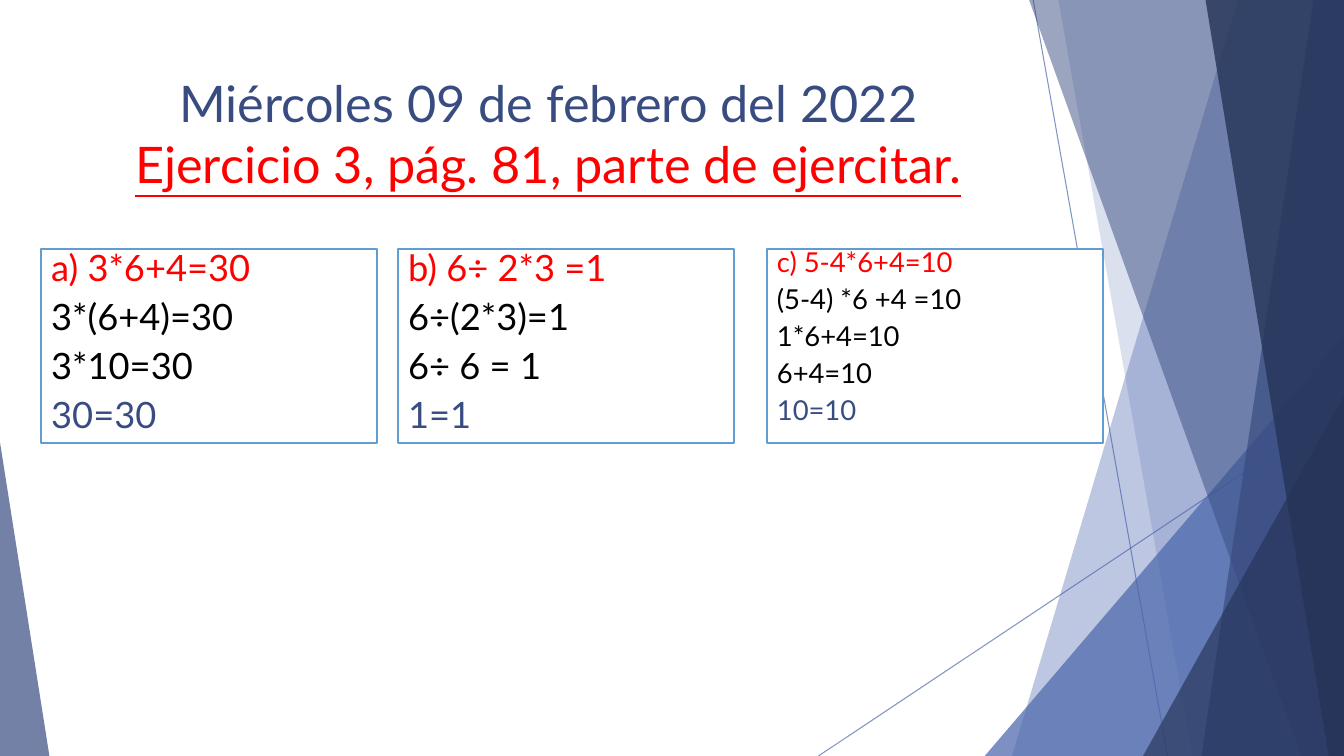
from dataclasses import dataclass
from typing import Any

from pptx import Presentation
from pptx.dml.color import RGBColor
from pptx.enum.shapes import MSO_CONNECTOR as CONN, MSO_SHAPE as SHAPE
from pptx.enum.text import MSO_ANCHOR as ANCHOR, PP_ALIGN as ALIGN
from pptx.oxml.ns import qn
from pptx.util import Pt
from lxml.etree import SubElement


@dataclass(frozen=True)
class Theme:
    font: str = "Lato"
    accent: str = "4A66AC"
    dark: str = "384C81"
    darkest: str = "253356"
    border: str = "629DD1"
    red: str = "FF0000"
    black: str = "000000"
    white: str = "FFFFFF"
    title_size: float = 36
    large: float = 25.9
    small: float = 19.6


@dataclass(frozen=True)
class Ray:
    start: tuple[float, float]
    end: tuple[float, float]


@dataclass(frozen=True)
class Band:
    """Panel from a slanted left edge to the right side of the slide."""
    top_x: float
    bottom_x: float
    color: str
    opacity: int


@dataclass(frozen=True)
class Wedge:
    """Right triangle standing on the bottom of the slide."""
    left: float
    top: float
    width: float
    apex: float
    color: str
    opacity: int


@dataclass(frozen=True)
class Exercise:
    left: float
    size: float
    spacing: float
    lines: tuple[str, ...]


T = Theme()
WIDTH, HEIGHT = 960, 540
BOX_TOP, BOX_WIDTH, BOX_HEIGHT = 177.8, 239.8, 139

RAYS = [Ray((738, 0), (834, HEIGHT)), Ray((WIDTH, 290), (584.6, HEIGHT))]
DECOR: list[Band | Wedge] = [
    Band(884.2, 722.9, T.accent, 36),
    Band(756, 851.8, T.accent, 20),
    Wedge(703.4, 240, 256.6, 1, T.accent, 72),
    Band(735.1, 929.5, T.dark, 50),
    Band(938.2, 858.2, T.dark, 70),
    Band(861.1, 949, T.darkest, 80),
    Wedge(816.5, 283, 143.5, 1, T.darkest, 66),
    Wedge(0, 316, 35.3, 0, T.dark, 70),
]
EXERCISES = [
    Exercise(29.5, T.large, 0.8,
             ("a) 3*6+4=30", "3*(6+4)=30", "3*10=30", "30=30")),
    Exercise(284.4, T.large, 0.8,
             ("b) 6÷ 2*3 =1", "6÷(2*3)=1", "6÷ 6 = 1", "1=1")),
    Exercise(547.9, T.small, 0.7,
             ("c) 5-4*6+4=10", "(5-4) *6 +4 =10", "1*6+4=10", "6+4=10", "10=10")),
]


def rgb(color: str) -> RGBColor:
    return RGBColor.from_string(color)


def apply(target: Any, formats: dict[str, Any]) -> None:
    for name, value in formats.items():
        setattr(target, name, value)


def set_opacity(element: Any, percent: int) -> None:
    for clr in element.spPr.iter(qn("a:srgbClr")):
        SubElement(clr, qn("a:alpha"), val=str(percent * 1000))


def add_run(p: Any, text: str, size: float, color: str, **extra: Any) -> None:
    r = p.add_run()
    r.text = text
    apply(r.font, {"name": T.font, "size": Pt(size), **extra})
    r.font.color.rgb = rgb(color)


def add_ray(s: Any, ray: Ray) -> None:
    line = s.shapes.add_connector(CONN.STRAIGHT, *map(Pt, ray.start + ray.end))
    line.line.width = Pt(0.75)
    line.line.color.rgb = rgb(T.accent)
    set_opacity(line._element, 70)
    SubElement(line._element.spPr, qn("a:effectLst"))


def add_decor(s: Any, item: Band | Wedge) -> None:
    if isinstance(item, Band):
        builder = s.shapes.build_freeform(Pt(item.top_x), Pt(0))
        corners = [(WIDTH, 0), (WIDTH, HEIGHT), (item.bottom_x, HEIGHT)]
        builder.add_line_segments([(Pt(x), Pt(y)) for x, y in corners], close=True)
        sp = builder.convert_to_shape()
    else:
        box = (item.left, item.top, item.width, HEIGHT - item.top)
        sp = s.shapes.add_shape(SHAPE.ISOSCELES_TRIANGLE, *map(Pt, box))
        sp.adjustments[0] = item.apex
    sp.shadow.inherit = False
    sp.line.fill.background()
    sp.fill.solid()
    sp.fill.fore_color.rgb = rgb(item.color)
    set_opacity(sp._element, item.opacity)


def add_title(s: Any) -> None:
    tf = s.shapes.add_textbox(Pt(53.3), Pt(48.2), Pt(676.8), Pt(103.7)).text_frame
    apply(tf, {"word_wrap": True, "vertical_anchor": ANCHOR.TOP})
    p = tf.paragraphs[0]
    p.alignment = ALIGN.CENTER
    add_run(p, "Miércoles 09 de febrero del 2022", T.title_size, T.dark)
    p.add_line_break()
    add_run(p, "Ejercicio 3, pág. 81, parte de ejercitar.", T.title_size, T.red,
            underline=True)


def add_exercise(s: Any, ex: Exercise) -> None:
    box = (ex.left, BOX_TOP, BOX_WIDTH, BOX_HEIGHT)
    sp = s.shapes.add_shape(SHAPE.RECTANGLE, *map(Pt, box))
    sp.shadow.inherit = False
    sp.fill.solid()
    sp.fill.fore_color.rgb = rgb(T.white)
    sp.line.width = Pt(1.5)
    sp.line.color.rgb = rgb(T.border)
    tf = sp.text_frame
    apply(tf, {"word_wrap": True, "vertical_anchor": ANCHOR.TOP})
    # Statement in red, steps in black, result in blue
    colors = [T.red, *[T.black] * (len(ex.lines) - 2), T.dark]
    for i, (text, color) in enumerate(zip(ex.lines, colors)):
        p = tf.add_paragraph() if i else tf.paragraphs[0]
        apply(p, {"alignment": ALIGN.LEFT, "line_spacing": ex.spacing,
                  "space_before": Pt(10)})
        add_run(p, text, ex.size, color)


def main() -> None:
    prs = Presentation()
    apply(prs, {"slide_width": Pt(WIDTH), "slide_height": Pt(HEIGHT)})
    s = prs.slides.add_slide(prs.slide_layouts[6])

    # Background facets
    for ray in RAYS:
        add_ray(s, ray)
    for item in DECOR:
        add_decor(s, item)

    # Title and worked exercises
    add_title(s)
    for ex in EXERCISES:
        add_exercise(s, ex)

    prs.save("out.pptx")


if __name__ == "__main__":
    main()
